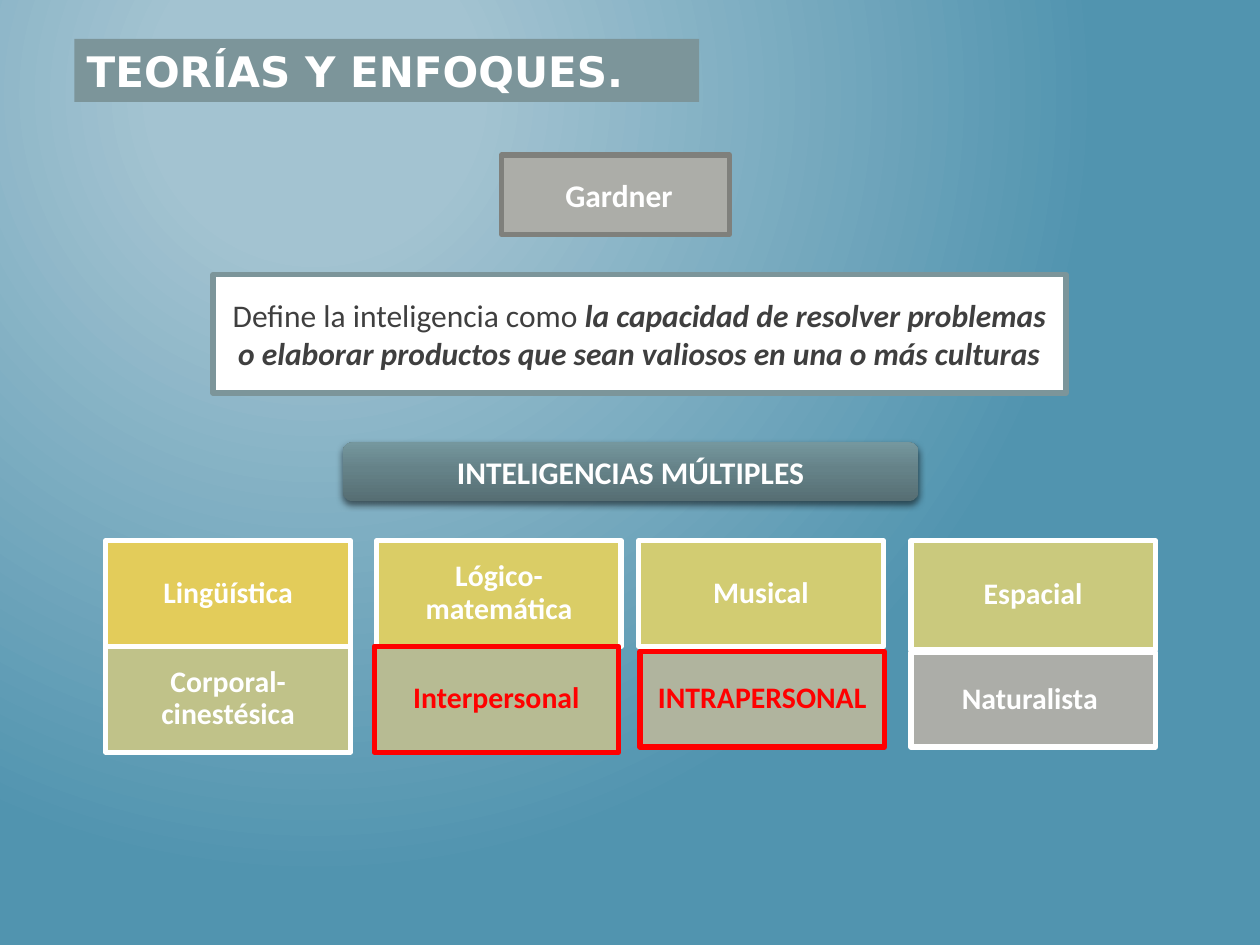
from pptx import Presentation, util as u
from pptx.dml.color import RGBColor
from pptx.enum import shapes, text
from pptx.oxml import parse_xml
from pptx.oxml.ns import nsdecls, qn

HUES = {
    "white": "FFFFFF", "red": "FF0000", "ink": "3F3F3F", "slate": "7C959A",
    "gray": "ACADA8", "edge": "7F807C", "light": "A3C3D1", "blue": "5194AF",
    "deep": "566E73", "mid": "658288", "pale": "75979E", "black": "000000",
    "gold": "E3CC5A", "straw": "DACD66", "lime": "D2CC72", "moss": "CAC97D",
    "olive": "C0C289", "sage": "B7BB93", "fern": "B0B49E",
}
KINDS = [
    ("Lingüística", "gold", "white", (0.84, 4.29, 1.94, 0.84)),
    ("Lógico-matemática", "straw", "white", (2.99, 4.29, 1.94, 0.84)),
    ("Musical", "lime", "white", (5.07, 4.29, 1.94, 0.84)),
    ("Espacial", "moss", "white", (7.23, 4.29, 1.94, 0.87)),
    ("Corporal-cinestésica", "olive", "white", (0.84, 5.13, 1.94, 0.84)),
    ("Interpersonal", "sage", "red", (2.97, 5.13, 1.94, 0.84)),
    ("INTRAPERSONAL", "fern", "red", (5.08, 5.17, 1.94, 0.76)),
    ("Naturalista ", "gray", "white", (7.23, 5.18, 1.94, 0.75)),
]


def tint(name):
    """Return the named colour."""
    return RGBColor.from_string(HUES[name])


def blend(owner, stops, course):
    """Give the owner's gradient fill its stops and course."""
    old = owner.find(".//" + qn("a:gradFill"))
    marks = "".join(
        f'<a:gs pos="{pos * 1000}"><a:srgbClr val="{HUES[name]}"/></a:gs>'
        for pos, name in stops)
    new = parse_xml(f'<a:gradFill {nsdecls("a")} rotWithShape="1">'
                    f'<a:gsLst>{marks}</a:gsLst>{course}</a:gradFill>')
    old.getparent().replace(old, new)


def block(slide, box, fill=None, line=None, form="RECTANGLE"):
    """Add a flat shape in the box."""
    shape = slide.shapes.add_shape(
        getattr(shapes.MSO_SHAPE, form), *map(u.Inches, box))
    shape.shadow.inherit = False
    if fill:
        shape.fill.solid()
        shape.fill.fore_color.rgb = tint(fill)
    if line:
        shape.line.color.rgb = tint(line)
        shape.line.width = u.Pt(3)
    else:
        shape.line.fill.background()
    return shape


def write(shape, words, size=18, font="Calibri", color="white", bold=True,
          italic=False, align="CENTER", anchor="MIDDLE", space=None, inset=None):
    """Append a formatted run to the shape's paragraph."""
    frame = shape.text_frame
    frame.word_wrap = True
    frame.vertical_anchor = getattr(text.MSO_ANCHOR, anchor)
    if inset is not None:
        frame.margin_left = frame.margin_right = u.Inches(inset)
        frame.margin_top = frame.margin_bottom = u.Inches(inset)
    para = frame.paragraphs[0]
    para.alignment = getattr(text.PP_ALIGN, align)
    para.line_spacing = space
    run = para.add_run()
    run.text = words
    run.font.size = u.Pt(size)
    run.font.name = font
    run.font.color.rgb = tint(color)
    run.font.bold, run.font.italic = bold, italic


def paint(slide):
    """Fill the background with a circular gradient."""
    slide.background.fill.gradient()
    blend(slide.element, [(20, "light"), (100, "blue")],
          '<a:path path="circle"><a:fillToRect l="50000" t="20000" '
          'r="100000" b="100000"/></a:path>')


def title(slide, box):
    """Place the title band."""
    write(block(slide, box, "slate"), "TEORÍAS Y ENFOQUES.", size=24,
          font="DejaVu Sans", align="LEFT", anchor="TOP")


def author(slide, box):
    """Place the author's name."""
    write(block(slide, box, "gray", "edge"), " Gardner")


def define(slide, box):
    """Place the definition of intelligence."""
    shape = block(slide, box, "white", "slate")
    write(shape, "Define la inteligencia como ", color="ink", bold=False)
    write(shape, "la capacidad de resolver problemas o elaborar productos "
          "que sean valiosos en una o más culturas", color="ink", italic=True)


def banner(slide, box):
    """Place the shaded heading above the kinds."""
    shape = block(slide, box, form="ROUNDED_RECTANGLE")
    shape.fill.gradient()
    blend(shape.element, [(0, "deep"), (55, "mid"), (100, "pale")],
          '<a:lin ang="16200000" scaled="0"/>')
    glow = shape.element.spPr.find(qn("a:effectLst"))
    glow.append(parse_xml(
        f'<a:outerShdw {nsdecls("a")} blurRad="{u.Pt(4)}" dist="{u.Pt(2)}" '
        f'dir="5400000" rotWithShape="0"><a:srgbClr val="{HUES["black"]}">'
        '<a:alpha val="55000"/></a:srgbClr></a:outerShdw>'))
    write(shape, "INTELIGENCIAS MÚLTIPLES")


def kinds(slide):
    """Place the eight kinds of intelligence."""
    for words, fill, color, box in KINDS:
        write(block(slide, box, fill, color), words, size=17, color=color,
              space=0.9, inset=0.07)


def main():
    """Build and save the slide."""
    deck = Presentation()
    deck.slide_width, deck.slide_height = u.Inches(10), u.Inches(7.5)
    slide = deck.slides.add_slide(deck.slide_layouts[6])
    paint(slide)
    title(slide, (0.59, 0.31, 4.96, 0.5))
    author(slide, (3.98, 1.23, 1.81, 0.63))
    define(slide, (1.69, 2.18, 6.77, 0.94))
    kinds(slide)
    banner(slide, (2.72, 3.51, 4.57, 0.47))
    deck.save("out.pptx")


if __name__ == "__main__":
    main()
